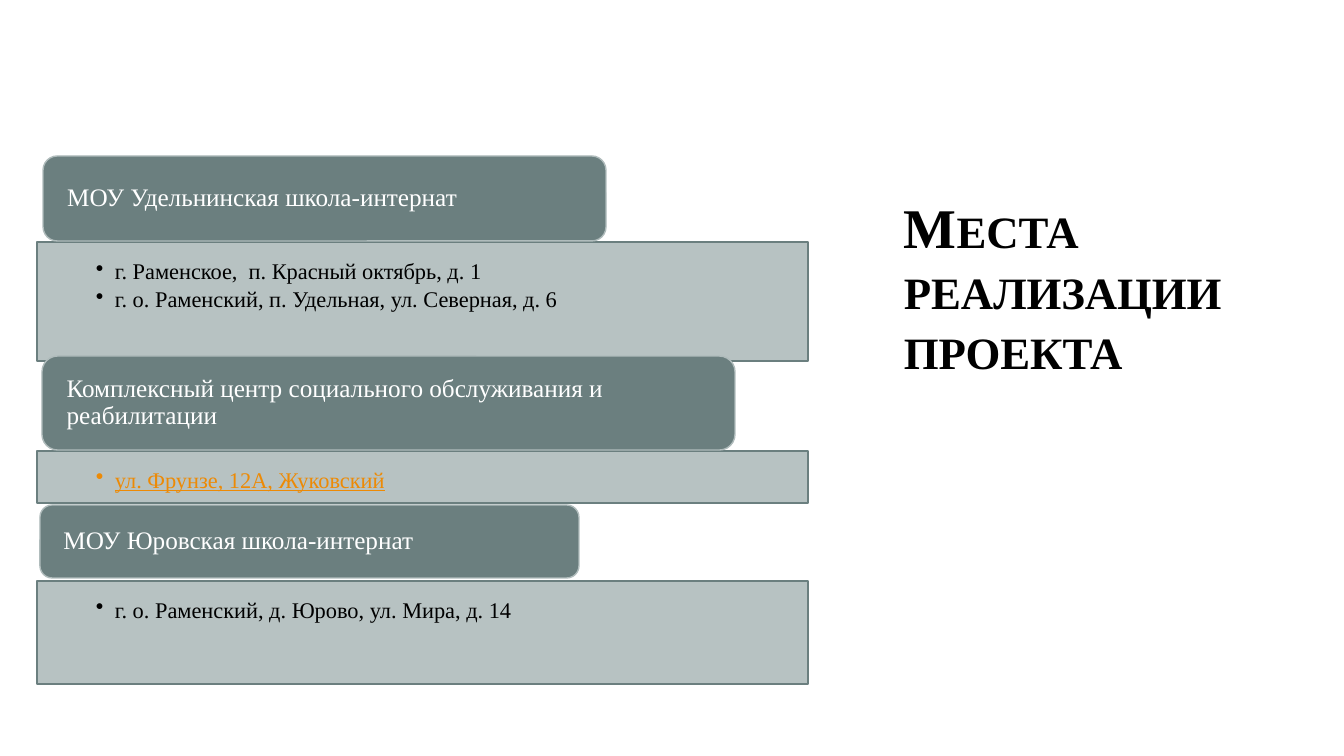
from pptx import Presentation
from pptx.dml.color import RGBColor
from pptx.enum.shapes import MSO_SHAPE
from pptx.enum.text import MSO_ANCHOR, PP_ALIGN
from pptx.oxml.ns import qn
from pptx.util import Pt
from lxml import etree

RECT, ROUND = MSO_SHAPE.RECTANGLE, MSO_SHAPE.ROUNDED_RECTANGLE
TOP, MIDDLE, BOTTOM = MSO_ANCHOR.TOP, MSO_ANCHOR.MIDDLE, MSO_ANCHOR.BOTTOM
LEFT = PP_ALIGN.LEFT
FONT = "Times New Roman"
DARK, LIGHT = "6B7F7F", "B0BCBC"
BLACK, WHITE, ORANGE = "000000", "FFFFFF", "ED8A05"
PX = 914400 / 100.8


def px(n):
    return round(n * PX)


def rgb(value):
    return RGBColor.from_string(value)


prs = Presentation()
prs.slide_width, prs.slide_height = px(1344), px(756)
s = prs.slides.add_slide(prs.slide_layouts[6])

# Title
tf = s.shapes.add_textbox(px(894), px(126), px(383), px(261)).text_frame
tf.word_wrap = True
tf.vertical_anchor = BOTTOM
p = tf.paragraphs[0]
p.text = "Места реализации проекта"
p.line_spacing = 0.9
r = p.runs[0]
r.font.name, r.font.size, r.font.bold = FONT, Pt(40), True
r.font.color.rgb = rgb(BLACK)
r.font._element.set("cap", "small")

# Sites: heading and its box, address colour, addresses and their box
PANEL_X, PANEL_W = 37, 771
sites = [
    ("МОУ Удельнинская школа-интернат", (43, 156, 563, 85), BLACK,
     ["г. Раменское,  п. Красный октябрь, д. 1",
      "г. о. Раменский, п. Удельная, ул. Северная, д. 6"], (242, 119)),
    ("Комплексный центр социального обслуживания и реабилитации",
     (42, 356, 693, 94), BLACK and ORANGE,
     ["ул. Фрунзе, 12А, Жуковский"], (451, 52)),
    ("МОУ Юровская школа-интернат", (40, 505, 539, 73), BLACK,
     ["г. о. Раменский, д. Юрово, ул. Мира, д. 14"], (581, 103)),
]
sites = [(h, box, c, a, (PANEL_X, y, PANEL_W, height))
         for h, box, c, a, (y, height) in sites]

for heading, heading_box, color, addresses, panel_box in sites:
    parts = [
        (RECT, panel_box, LIGHT, DARK, TOP, (59, 18, 59, 12), addresses, 16, color),
        (ROUND, heading_box, DARK, LIGHT, MIDDLE, (20, 0, 20, 0), [heading], 18, WHITE),
    ]
    for kind, box, fill, line, anchor, insets, lines, size, text_color in parts:
        sp = s.shapes.add_shape(kind, *map(px, box))
        sp.shadow.inherit = False
        sp.fill.solid()
        sp.fill.fore_color.rgb = rgb(fill)
        sp.line.color.rgb = rgb(line)
        sp.line.width = Pt(1)
        if kind == RECT:
            clr = sp._element.spPr.find(qn("a:solidFill"))[0]
            etree.SubElement(clr, qn("a:alpha"), val="90000")

        tf = sp.text_frame
        tf.word_wrap = True
        tf.vertical_anchor = anchor
        (tf.margin_left, tf.margin_top,
         tf.margin_right, tf.margin_bottom) = map(px, insets)
        tf.text = "\n".join(lines)
        for p in tf.paragraphs:
            p.alignment = LEFT
            p.line_spacing = 0.9
            if kind == RECT:
                p.space_after = Pt(3)
                pPr = p._p.get_or_add_pPr()
                pPr.set("marL", str(px(19)))
                pPr.set("indent", str(px(-19)))
                etree.SubElement(pPr, qn("a:buChar"), char="•")
            font = p.runs[0].font
            font.name, font.size = FONT, Pt(size)
            font.color.rgb = rgb(text_color)
            font.underline = text_color == ORANGE

prs.save("out.pptx")
